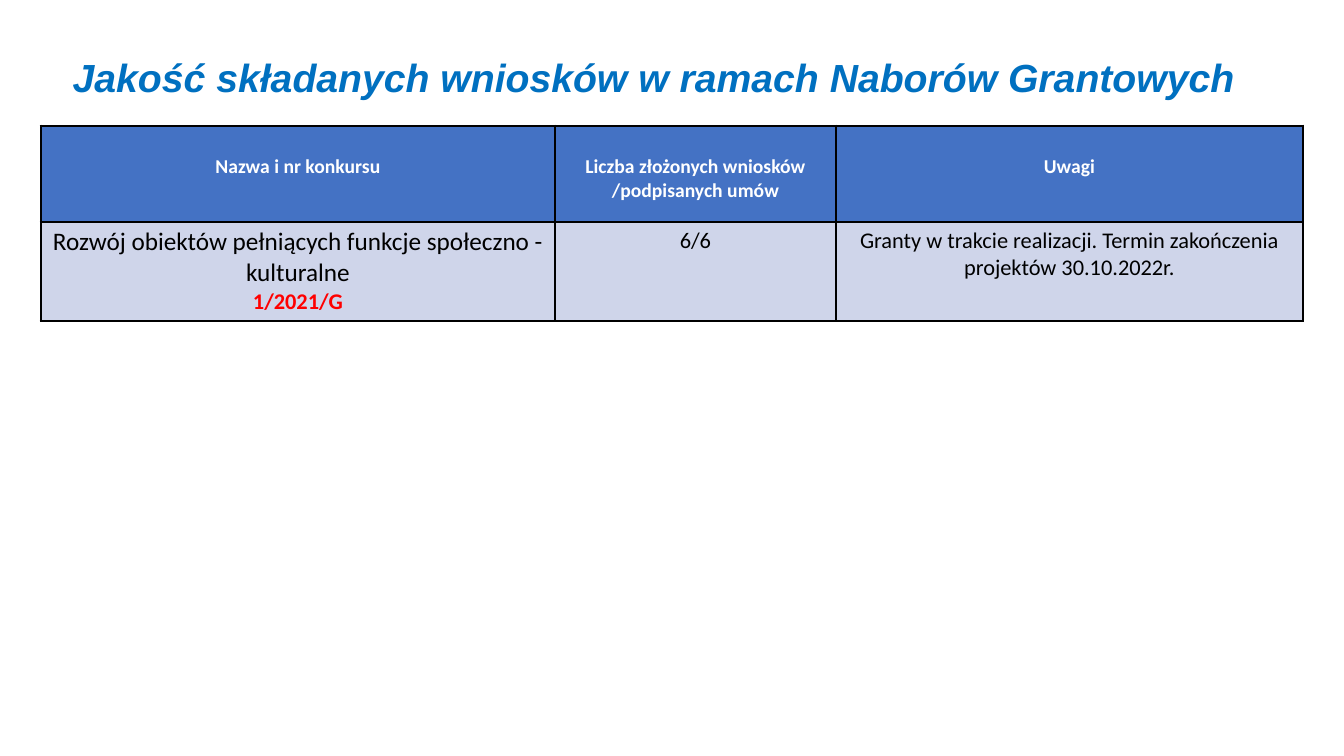
import pptx
import pptx.dml.color
import pptx.enum.text
import pptx.oxml
import pptx.oxml.ns
import pptx.util

COLORS = {
    "title": "0070C0", "header": "4472C4", "body": "CFD5EA", "border": "000000",
    "white": "FFFFFF", "black": "000000", "red": "FF0000",
}
TITLE = "Jakość składanych wniosków w ramach Naborów Grantowych"
HEADERS = ["Nazwa i nr konkursu", "Liczba złożonych wniosków /podpisanych umów", "Uwagi"]
# Each body cell is a list of paragraphs: text, size, colour, bold
BODY = [
    [("Rozwój obiektów pełniących funkcje społeczno - kulturalne", 18, "black", False),
     ("1/2021/G", 16, "red", True)],
    [("6/6", 16, "black", False)],
    [("Granty w trakcie realizacji. Termin zakończenia projektów 30.10.2022r.",
      16, "black", False)],
]
ROWS = [[[(text, 14, "white", True)] for text in HEADERS], BODY]
ROW_FILLS = ["header", "body"]

PAGE_SIZE = (1344, 756)
TITLE_BOX = (-7, 0, 1321, 105)
TABLE_LEFT, TABLE_TOP = 41, 126
COLUMN_WIDTHS = [514, 281, 467]
ROW_HEIGHTS = [96, 98]
ROW_TOP_MARGINS = [29, 5]
BORDER_POINTS = 2.25


def px(length):
    return pptx.util.Emu(round(length * 914400 / 100.8))


def rgb(name):
    return pptx.dml.color.RGBColor.from_string(COLORS[name])


def add_span(para, text, size, color, bold, font="Calibri", italic=False):
    para.alignment = pptx.enum.text.PP_ALIGN.CENTER
    span = para.add_run()
    span.text = text
    span.font.name = font
    span.font.size = pptx.util.Pt(size)
    span.font.bold = bold
    span.font.italic = italic
    span.font.color.rgb = rgb(color)


def add_borders(cell):
    properties = cell._tc.get_or_add_tcPr()
    for side in ("lnL", "lnR", "lnT", "lnB"):
        properties.append(pptx.oxml.parse_xml(
            f'<a:{side} {pptx.oxml.ns.nsdecls("a")} w="{pptx.util.Pt(BORDER_POINTS)}">'
            f'<a:solidFill><a:srgbClr val="{COLORS["border"]}"/></a:solidFill></a:{side}>'))


def add_title(page):
    box = page.shapes.title
    box.left, box.top, box.width, box.height = map(px, TITLE_BOX)
    frame = box.text_frame
    frame.word_wrap = True
    frame.auto_size = pptx.enum.text.MSO_AUTO_SIZE.NONE
    frame.vertical_anchor = pptx.enum.text.MSO_ANCHOR.BOTTOM
    add_span(frame.paragraphs[0], TITLE, 28, "title", True, "Arial", True)


def add_contest_table(page):
    table = page.shapes.add_table(
        len(ROWS), len(COLUMN_WIDTHS), px(TABLE_LEFT), px(TABLE_TOP),
        px(sum(COLUMN_WIDTHS)), px(sum(ROW_HEIGHTS))).table
    for column, width in zip(table.columns, COLUMN_WIDTHS):
        column.width = px(width)
    for row, height, margin, fill, contents in zip(
            table.rows, ROW_HEIGHTS, ROW_TOP_MARGINS, ROW_FILLS, ROWS):
        row.height = px(height)
        for cell, paragraphs in zip(row.cells, contents):
            add_borders(cell)
            cell.fill.solid()
            cell.fill.fore_color.rgb = rgb(fill)
            cell.margin_top = px(margin)
            frame = cell.text_frame
            for index, paragraph in enumerate(paragraphs):
                para = frame.add_paragraph() if index else frame.paragraphs[0]
                add_span(para, *paragraph)


def main():
    deck = pptx.Presentation()
    deck.slide_width, deck.slide_height = map(px, PAGE_SIZE)
    page = deck.slides.add_slide(deck.slide_layouts[5])
    add_contest_table(page)
    add_title(page)
    deck.save("out.pptx")


if __name__ == "__main__":
    main()
